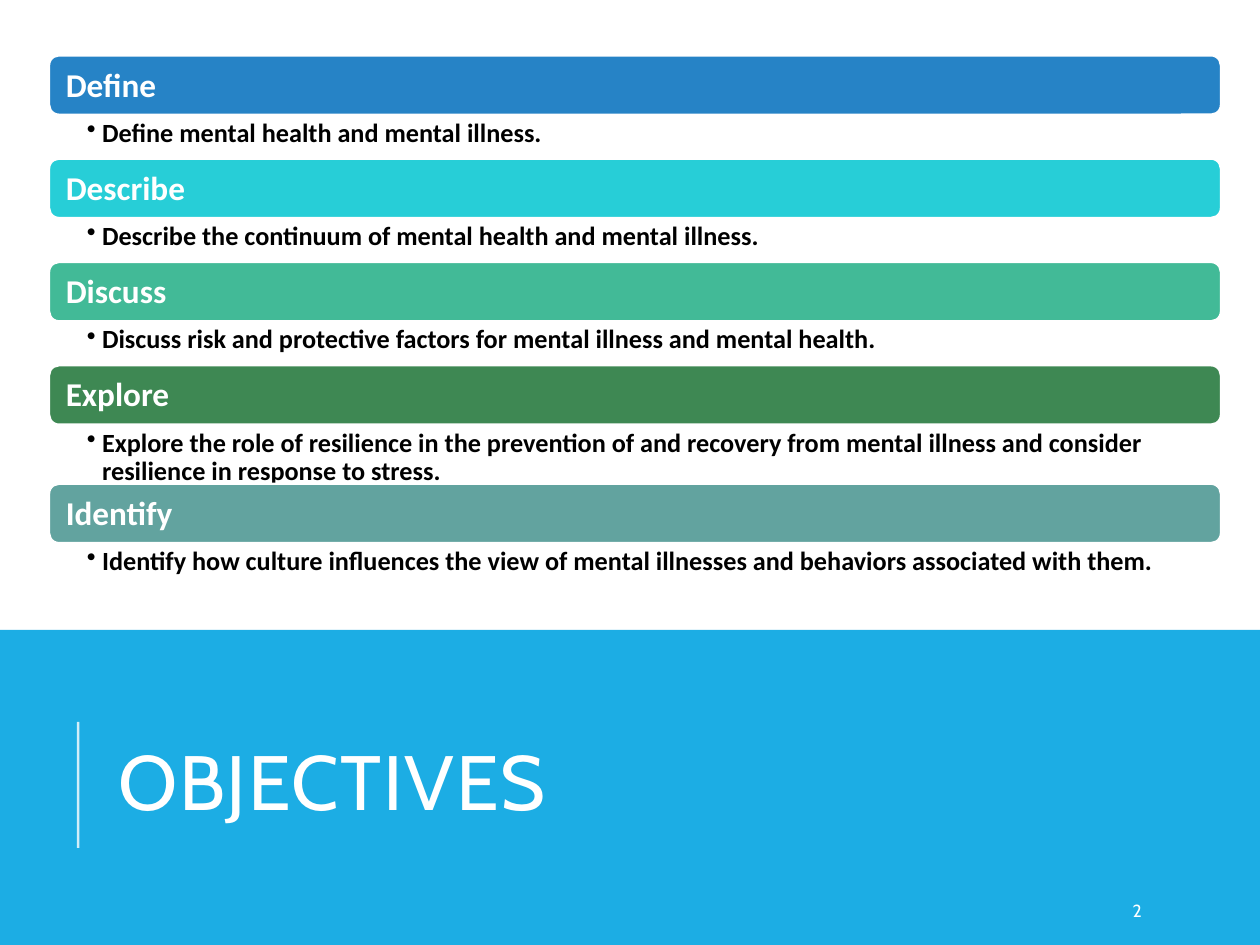
from lxml import etree
from pptx import Presentation
from pptx.dml.color import RGBColor
from pptx.enum import shapes, text
from pptx.oxml import ns
from pptx.util import Inches, Pt

HUES = {
    "band": "1CADE4", "white": "FFFFFF", "black": "000000",
    "blue": "2683C6", "cyan": "27CED7", "mint": "42BA97",
    "green": "3E8853", "teal": "62A39F",
}
HEAD, BODY = "Cabin", "Calibri"

# Heading, bar colour, note height, note
GOALS = [
    ("Define", "blue", 0.34, "Define mental health and mental illness."),
    ("Describe", "cyan", 0.34,
     "Describe the continuum of mental health and mental illness."),
    ("Discuss", "mint", 0.34,
     "Discuss risk and protective factors for mental illness and mental health."),
    ("Explore", "green", 0.46,
     "Explore the role of resilience in the prevention of and recovery from "
     "mental illness and consider resilience in response to stress."),
    ("Identify", "teal", 0.34,
     "Identify how culture influences the view of mental illnesses and "
     "behaviors associated with them."),
]


def hue(name):
    return RGBColor.from_string(HUES[name])


def sub(node, tag, **attrs):
    return etree.SubElement(node, ns.qn(tag), **attrs)


class Deck:
    def __init__(self, wide, high):
        self.prs = Presentation()
        self.prs.slide_width, self.prs.slide_height = Inches(wide), Inches(high)
        self.slide = self.prs.slides.add_slide(self.prs.slide_layouts[5])
        self.shapes = self.slide.shapes

    def fill_in(self, shape, words, size, font, color, bold=False, space=1.0,
                pad=(0.1, 0.05, 0.1, 0.05), anchor=text.MSO_ANCHOR.MIDDLE):
        frame = shape.text_frame
        frame.word_wrap = True
        frame.auto_size = text.MSO_AUTO_SIZE.NONE
        frame.vertical_anchor = anchor
        (frame.margin_left, frame.margin_top,
         frame.margin_right, frame.margin_bottom) = map(Inches, pad)
        frame.text = words
        para = frame.paragraphs[0]
        para.alignment = text.PP_ALIGN.LEFT
        para.line_spacing = space
        para.font.name, para.font.size, para.font.bold = font, Pt(size), bold
        para.font.color.rgb = hue(color)
        return para

    def box(self, kind, area, fill, line=None):
        shape = self.shapes.add_shape(kind, *map(Inches, area))
        shape.shadow.inherit = False
        shape.fill.solid()
        shape.fill.fore_color.rgb = hue(fill)
        if line:
            shape.line.color.rgb = hue(line)
            shape.line.width = Pt(1.25)
        else:
            shape.line.fill.background()
        return shape

    def band(self, area):
        shape = self.box(shapes.MSO_SHAPE.RECTANGLE, area, "band")
        # Send behind the title
        self.shapes._spTree.insert(2, shape._element)

    def title(self, area, words):
        shape = self.shapes.title
        shape.left, shape.top, shape.width, shape.height = map(Inches, area)
        para = self.fill_in(shape, words, 44, HEAD, "white", space=0.8)
        para.runs[0]._r.get_or_add_rPr().set("spc", "100")

    def rule(self, x, top, end):
        line = self.shapes.add_connector(
            shapes.MSO_CONNECTOR.STRAIGHT, *map(Inches, (x, end, x, top)))
        line.line.color.rgb = hue("white")
        line.line.width = Pt(1.5)
        props = line._element.spPr
        sub(props.find(".//" + ns.qn("a:srgbClr")), "a:alpha", val="80000")
        sub(props, "a:effectLst")

    def label(self, area, words):
        shape = self.shapes.add_textbox(*map(Inches, area))
        self.fill_in(shape, words, 10, HEAD, "white")

    def bar(self, area, words, fill):
        shape = self.box(shapes.MSO_SHAPE.ROUNDED_RECTANGLE, area, fill, "white")
        self.fill_in(shape, words, 19, BODY, "white", True, 0.9,
                     (0.11, 0.02, 0.11, 0))

    def note(self, area, words):
        shape = self.shapes.add_textbox(*map(Inches, area))
        para = self.fill_in(shape, words, 15, BODY, "black", True, 0.9,
                            (0.3, 0.03, 0.15, 0.03), text.MSO_ANCHOR.TOP)
        props = para._p.get_or_add_pPr()
        props.set("marL", str(Inches(0.12)))
        props.set("indent", str(Inches(-0.12)))
        bullet = etree.Element(ns.qn("a:buChar"), char="•")
        props.find(ns.qn("a:defRPr")).addprevious(bullet)


def main():
    deck = Deck(10, 7.5)

    # Title band
    deck.band((0, 5, 10, 2.5))
    deck.title((0.84, 5.44, 7.97, 1.64), "OBJECTIVES")
    deck.rule(0.62, 5.73, 6.73)
    deck.label((8.89, 7.08, 0.8, 0.3), "2")

    # Goals, stacked from the top
    left, top, wide, step = 0.39, 0.44, 9.3, 0.48
    for head, fill, high, words in GOALS:
        deck.bar((left, top, wide, 0.47), head, fill)
        deck.note((left, top + step, wide, high), words)
        top += step + high

    deck.prs.save("out.pptx")


if __name__ == "__main__":
    main()
